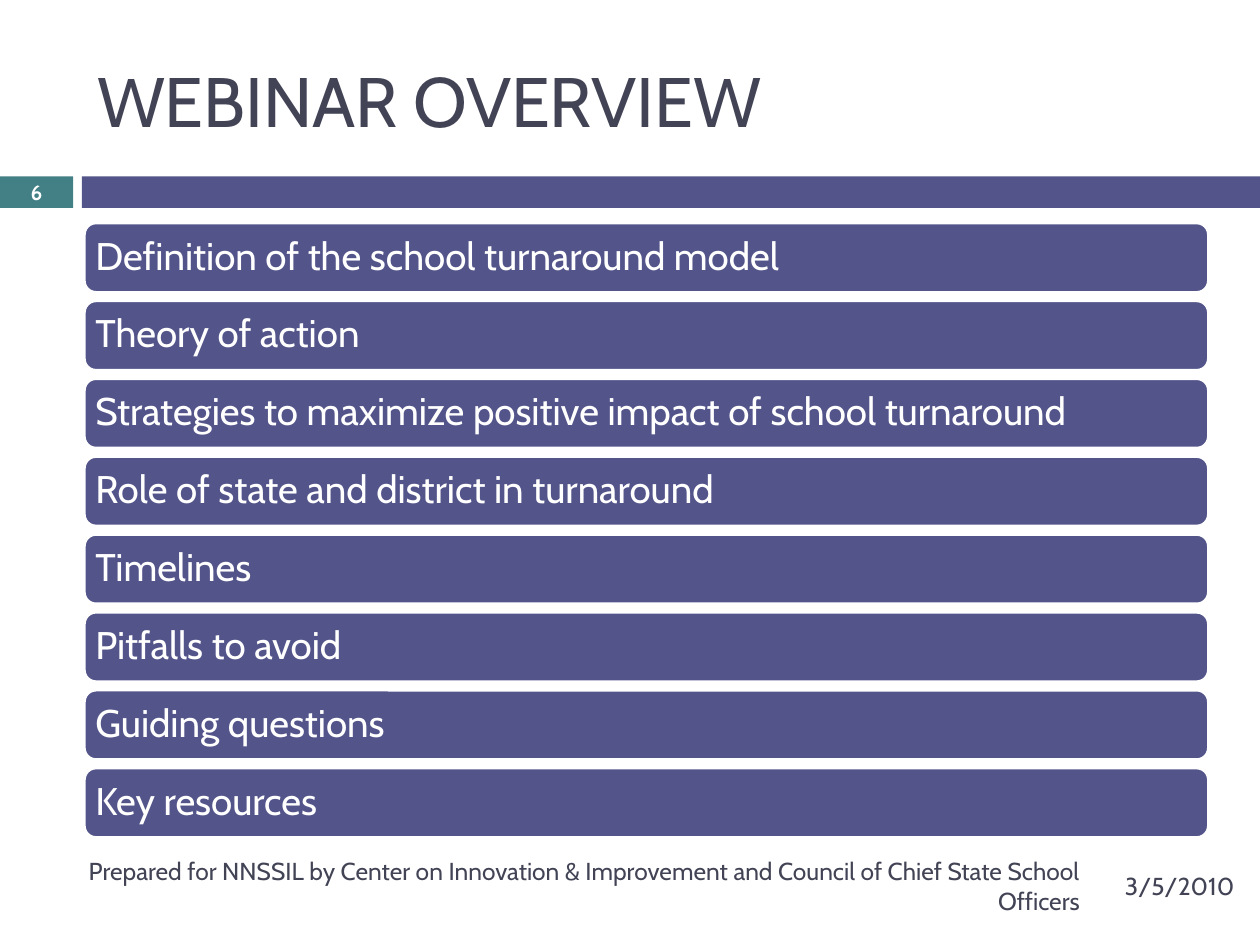
from dataclasses import dataclass

import pptx
import pptx.dml.color
import pptx.enum.shapes
import pptx.enum.text
import pptx.util
from pptx.dml.color import RGBColor
from pptx.enum.shapes import MSO_SHAPE
from pptx.enum.text import MSO_ANCHOR, PP_ALIGN
from pptx.util import Inches

TEAL = RGBColor(0x43, 0x80, 0x86)
PURPLE = RGBColor(0x53, 0x54, 0x8A)
SLATE = RGBColor(0x42, 0x44, 0x56)
WHITE = RGBColor(0xFF, 0xFF, 0xFF)
FONT = "Cabin"

TOPICS = [
    "Definition of the school turnaround model",
    "Theory of action",
    "Strategies to maximize positive impact of school turnaround",
    "Role of state and district in turnaround",
    "Timelines",
    "Pitfalls to avoid",
    "Guiding questions",
    "Key resources\u00a0",
]
TOPIC_TOP = 1.77
TOPIC_PITCH = 0.618


@dataclass(frozen=True)
class Box:
    left: float
    top: float
    width: float
    height: float

    def lengths(self) -> tuple:
        return tuple(map(Inches, (self.left, self.top, self.width, self.height)))


@dataclass(frozen=True)
class Label:
    box: Box
    text: str
    size: float
    color: RGBColor
    alignment: PP_ALIGN = PP_ALIGN.LEFT
    bold: bool = False


def write_text(shape, label: Label) -> None:
    frame = shape.text_frame
    frame.word_wrap = True
    frame.auto_size = pptx.enum.text.MSO_AUTO_SIZE.NONE
    frame.vertical_anchor = MSO_ANCHOR.MIDDLE
    frame.text = label.text
    paragraph = frame.paragraphs[0]
    paragraph.alignment = label.alignment
    paragraph.font.name = FONT
    paragraph.font.size = pptx.util.Pt(label.size)
    paragraph.font.bold = label.bold
    paragraph.font.color.rgb = label.color


def add_label(slide, label: Label) -> None:
    write_text(slide.shapes.add_textbox(*label.box.lengths()), label)


def add_bar(slide, box: Box, color: RGBColor, kind=MSO_SHAPE.RECTANGLE):
    shape = slide.shapes.add_shape(kind, *box.lengths())
    shape.shadow.inherit = False
    shape.fill.solid()
    shape.fill.fore_color.rgb = color
    shape.line.fill.background()
    return shape


def add_topic(slide, label: Label) -> None:
    shape = add_bar(slide, label.box, PURPLE, MSO_SHAPE.ROUNDED_RECTANGLE)
    shape.line.color.rgb = WHITE
    shape.line.width = pptx.util.Pt(1.5)
    write_text(shape, label)
    frame = shape.text_frame
    frame.margin_left = frame.margin_right = Inches(0.06)
    frame.margin_top = frame.margin_bottom = Inches(0.06)
    frame.paragraphs[0].line_spacing = 0.9


def main() -> None:
    presentation = pptx.Presentation()
    presentation.slide_width = Inches(10)
    presentation.slide_height = Inches(7.5)
    slide = presentation.slides.add_slide(presentation.slide_layouts[5])

    add_bar(slide, Box(0, 1.4, 0.58, 0.25), TEAL)
    add_bar(slide, Box(0.65, 1.4, 9.35, 0.25), PURPLE)

    heading = Label(Box(0.67, 0.25, 8.92, 1.08), "WEBINAR OVERVIEW", 40, SLATE)
    title = slide.shapes.title
    title.left, title.top, title.width, title.height = heading.box.lengths()
    write_text(title, heading)

    labels = [
        Label(Box(8.83, 6.83, 1.08, 0.4), "3/5/2010", 14, SLATE),
        Label(
            Box(0.17, 6.83, 8.5, 0.4),
            "Prepared for NNSSIL by Center on Innovation & Improvement "
            "and Council of Chief State School Officers",
            14,
            SLATE,
            PP_ALIGN.RIGHT,
        ),
        Label(Box(0, 1.39, 0.58, 0.27), "6", 11.9, WHITE, PP_ALIGN.CENTER, True),
    ]
    for label in labels:
        add_label(slide, label)

    for index, topic in enumerate(TOPICS):
        box = Box(0.67, TOPIC_TOP + index * TOPIC_PITCH, 8.92, 0.55)
        add_topic(slide, Label(box, topic, 22, WHITE))

    presentation.save("out.pptx")


if __name__ == "__main__":
    main()
